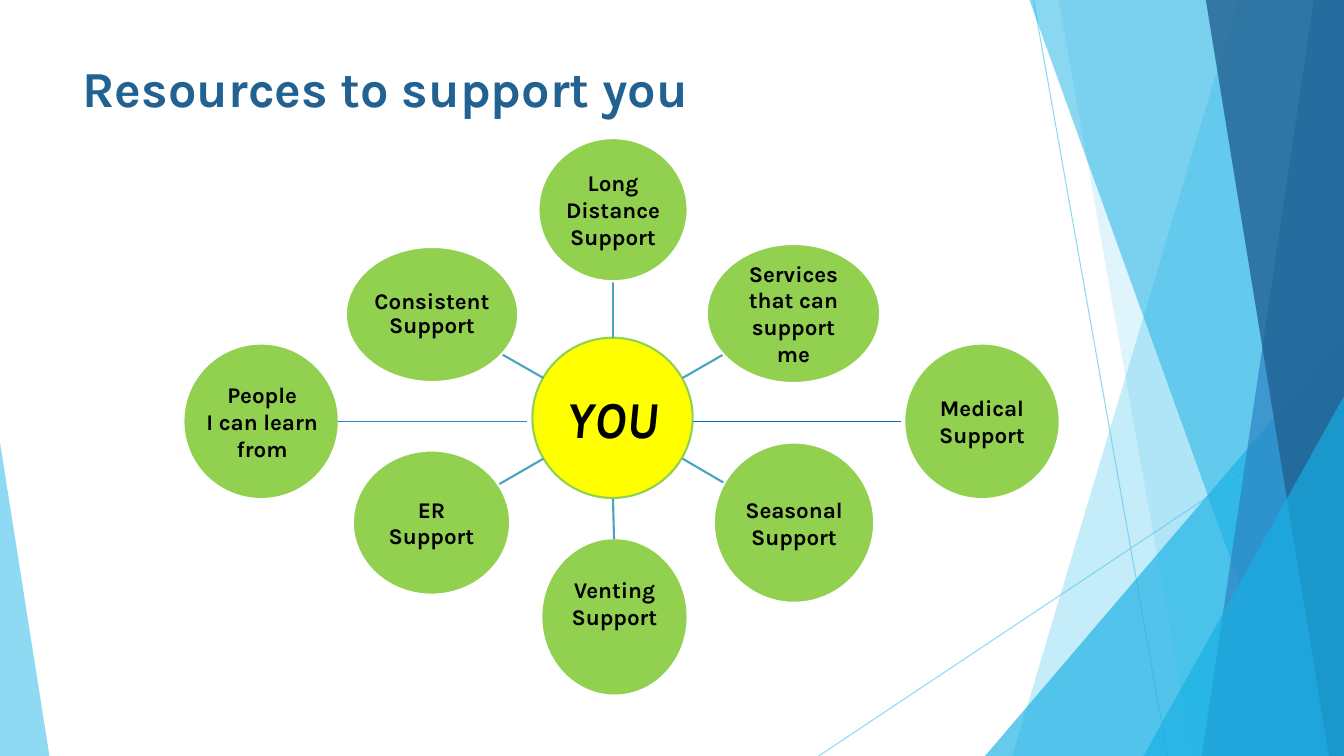
from lxml import etree
from pptx import Presentation
from pptx.dml.color import RGBColor
from pptx.enum.shapes import MSO_CONNECTOR, MSO_SHAPE
from pptx.enum.text import MSO_ANCHOR, PP_ALIGN
from pptx.oxml.ns import qn
from pptx.util import Inches, Pt

OVAL, TRIANGLE = MSO_SHAPE.OVAL, MSO_SHAPE.ISOSCELES_TRIANGLE
STRAIGHT = MSO_CONNECTOR.STRAIGHT
TOP, MIDDLE = MSO_ANCHOR.TOP, MSO_ANCHOR.MIDDLE
LEFT, CENTER = PP_ALIGN.LEFT, PP_ALIGN.CENTER

COLORS = {
    "sky": "5FCBEF", "cyan": "17B0E4", "blue": "2E83C3", "navy": "226292",
    "green": "92D050", "yellow": "FFFF00", "white": "FFFFFF",
    "black": "000000", "spoke": "4CA3BF", "link": "0070C0",
}
LABEL = {"size": Pt(16), "bold": True}
HUB = {"size": Pt(37), "bold": True, "italic": True}
TITLE = {"size": Pt(36), "bold": True}
W, H = 13.33, 7.5


class SlideBuilder:
    font = "Karla"

    def __init__(self, slide):
        self.shapes = slide.shapes

    def paint(self, fmt, color, alpha=100):
        """Give a fill or line a solid colour, optionally see-through."""
        fill = getattr(fmt, "fill", fmt)
        fill.solid()
        fill.fore_color.rgb = RGBColor.from_string(COLORS[color])
        if alpha < 100:
            clr = fill._xPr.find(qn("a:solidFill"))[0]
            etree.SubElement(clr, qn("a:alpha")).set("val", str(alpha * 1000))

    def finish(self, sp, fill, alpha=100, line=None):
        sp.shadow.inherit = False
        self.paint(sp.fill, fill, alpha)
        if line:
            self.paint(sp.line, line)
            sp.line.width = Pt(1.5)
        else:
            sp.line.fill.background()
        return sp

    def polygon(self, points, fill, alpha):
        pts = [(Inches(x), Inches(y)) for x, y in points]
        fb = self.shapes.build_freeform(*pts[0])
        fb.add_line_segments(pts[1:], close=True)
        return self.finish(fb.convert_to_shape(), fill, alpha)

    def preset(self, kind, box, fill, alpha=100, line=None, adj=None):
        sp = self.shapes.add_shape(kind, *map(Inches, box))
        if adj is not None:
            sp.adjustments[0] = adj
        return self.finish(sp, fill, alpha, line)

    def line(self, start, end, color, width, alpha=100):
        cx = self.shapes.add_connector(STRAIGHT, *map(Inches, start + end))
        self.paint(cx.line, color, alpha)
        cx.line.width = Pt(width)
        etree.SubElement(cx._element.spPr, qn("a:effectLst"))

    def label(self, sp, lines, style, color="black", align=CENTER,
              anchor=MIDDLE, spacing=None, inset=0.01, extra_bottom=0):
        tf = sp.text_frame
        frame = {"word_wrap": True, "vertical_anchor": anchor,
                 "margin_left": Inches(inset), "margin_right": Inches(inset),
                 "margin_top": Inches(inset),
                 "margin_bottom": Inches(inset + extra_bottom)}
        for name, value in frame.items():
            setattr(tf, name, value)
        for i, text in enumerate(lines):
            p = tf.add_paragraph() if i else tf.paragraphs[0]
            p.alignment = align
            if spacing:
                p.line_spacing = spacing
            r = p.add_run()
            r.text = text
            for name, value in {"name": self.font, **style}.items():
                setattr(r.font, name, value)
            r.font.color.rgb = RGBColor.from_string(COLORS[color])

    def textbox(self, box, lines, style, **options):
        sp = self.shapes.add_textbox(*map(Inches, box))
        self.label(sp, lines, style, **options)


def main():
    prs = Presentation()
    prs.slide_width, prs.slide_height = Inches(W), Inches(H)
    s = SlideBuilder(prs.slides.add_slide(prs.slide_layouts[6]))

    # Faceted background: thin lines, bands to the right edge, corner triangles
    s.line((10.25, 0), (11.58, H), "sky", 0.75, 70)
    s.line((W, 4.03), (8.12, H), "sky", 0.75, 70)

    def band(top_x, bottom_x, fill, alpha):
        s.polygon([(top_x, 0), (W, 0), (W, H), (bottom_x, H)], fill, alpha)

    def corner(left, top, fill="cyan", alpha=66):
        s.preset(TRIANGLE, (left, top, W - left, H - top), fill, alpha, adj=1)

    band(12.28, 10.04, "sky", 36)
    band(10.5, 11.83, "sky", 20)
    corner(9.77, 3.33)
    band(10.21, 12.91, "cyan", 50)
    band(13.03, 11.92, "blue", 70)
    band(11.96, 13.18, "navy", 80)
    corner(11.34, 3.93)
    s.preset(TRIANGLE, (0, 4.39, 0.49, 3.11), "sky", 70, adj=0)

    # Title
    s.textbox((0.72, 0.47, 6.83, 1.08), ["Resources to support you"], TITLE,
              color="navy", align=LEFT, anchor=TOP, inset=0.1)

    # Hub
    hub = s.preset(OVAL, (5.28, 3.35, 1.59, 1.59), "yellow", line="green")
    s.label(hub, ["YOU"], HUB, inset=0.03)

    # Spokes from the hub to the inner circles
    for start, end in [
        ((6.08, 3.35), (6.08, 2.79)), ((6.77, 3.75), (7.17, 3.52)),
        ((6.77, 4.55), (7.18, 4.79)), ((6.08, 4.95), (6.09, 5.35)),
        ((5.39, 4.55), (4.94, 4.81)), ((5.39, 3.75), (4.97, 3.51)),
    ]:
        s.line(start, end, "spoke", 1.5)

    # Support circles
    for box, text, line, options in [
        ((5.34, 1.37, 1.48, 1.42), "Long Distance Support", "white", {}),
        ((7.01, 2.42, 1.72, 1.38), "Services that can support me", "white", {}),
        ((7.08, 4.39, 1.59, 1.59), "Seasonal Support", "white", {}),
        ((5.38, 5.35, 1.43, 1.54), "Venting Support", None,
         {"extra_bottom": 0.27}),
        ((3.5, 4.47, 1.56, 1.43), "ER Support", "white", {}),
        ((3.43, 2.45, 1.71, 1.34), "Consistent Support", "white",
         {"spacing": 0.9}),
        ((8.99, 3.43, 1.5, 1.5), "Medical Support", "green", {}),
    ]:
        circle = s.preset(OVAL, box, "green", line=line)
        s.label(circle, [text], LABEL, **options)

    # Left circle, whose label is wider than its inner area
    s.preset(OVAL, (1.84, 3.43, 1.5, 1.5), "green", line="green")
    s.textbox((1.85, 3.73, 1.5, 0.91), ["People", "I can learn from"], LABEL,
              inset=0.1)

    # Links to the outer circles
    s.line((3.35, 4.18), (5.23, 4.18), "blue", 1)
    s.line((8.94, 4.18), (6.87, 4.18), "link", 1)

    prs.save("out.pptx")


if __name__ == "__main__":
    main()
